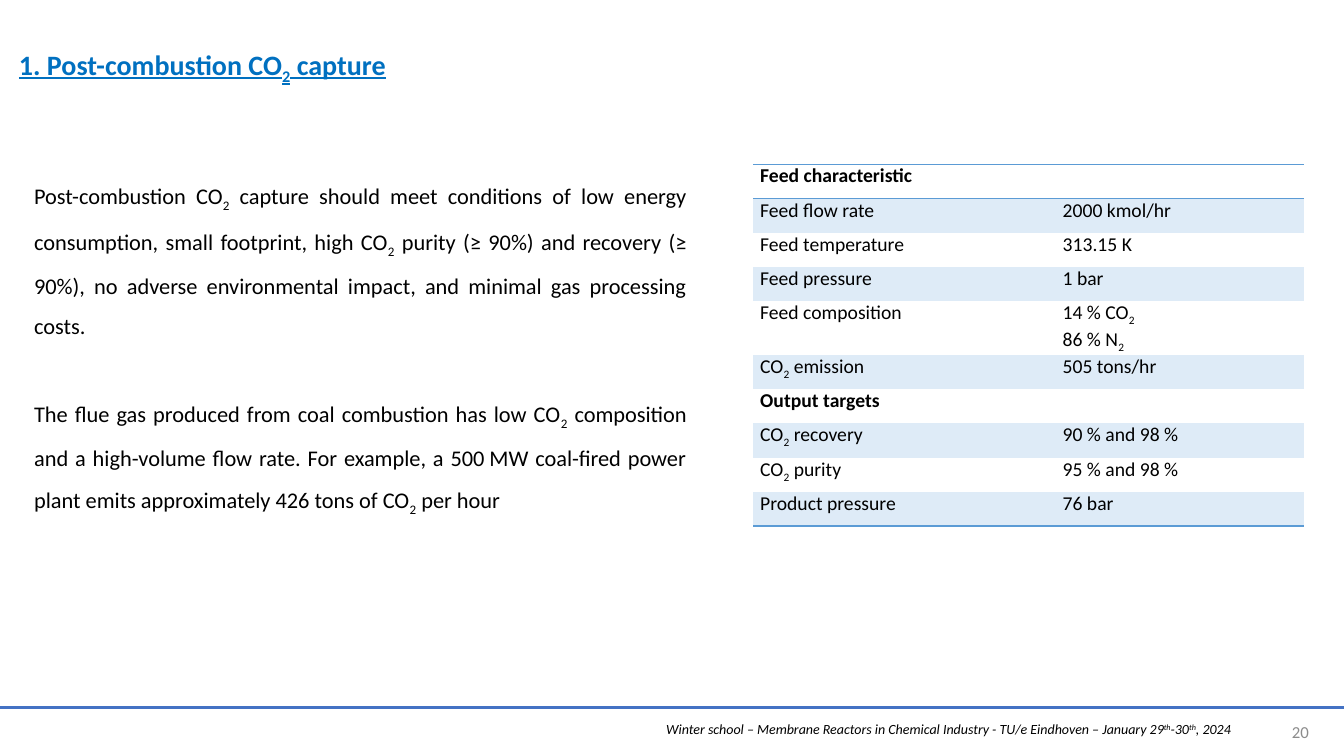
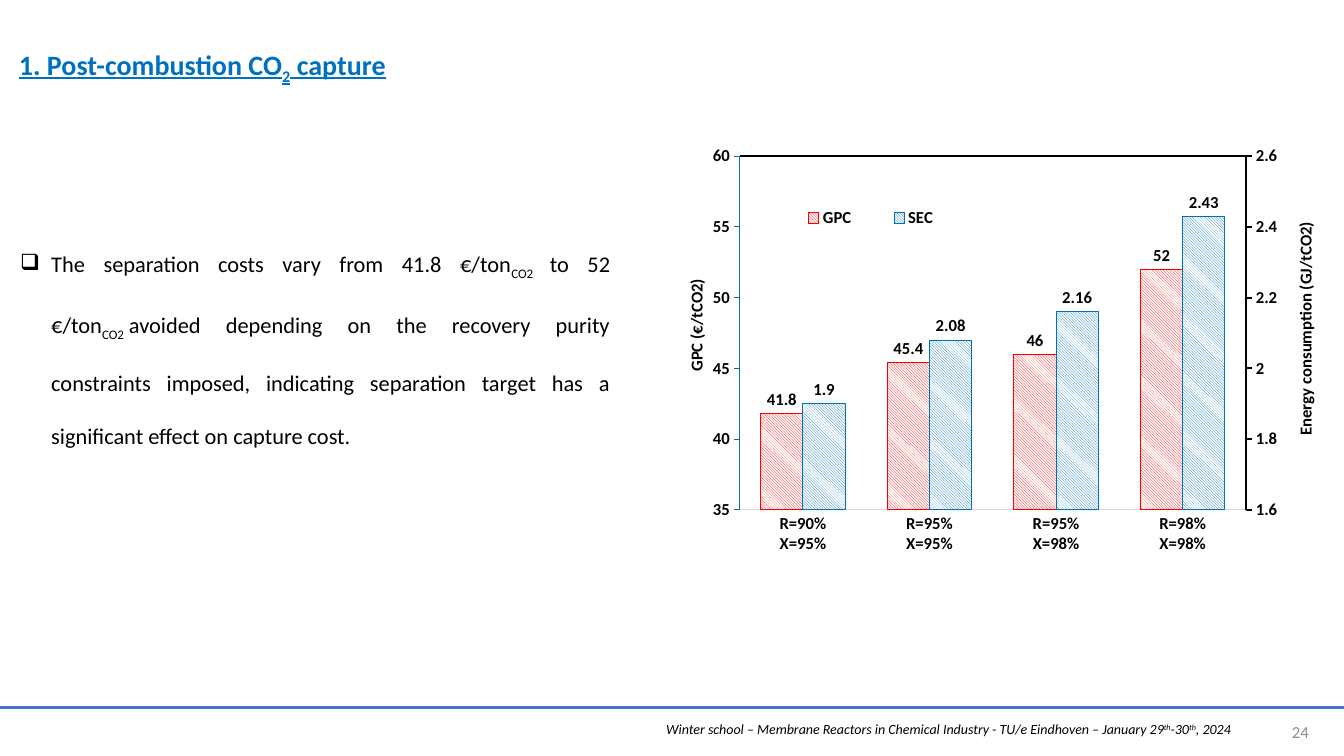
import copy

import lxml.etree
import pptx
import pptx.chart.axis
import pptx.chart.data
import pptx.dml.color
import pptx.enum.chart
import pptx.enum.dml
import pptx.enum.shapes
import pptx.enum.text
import pptx.oxml
import pptx.oxml.ns
import pptx.util

Inches = pptx.util.Inches
Pt = pptx.util.Pt
qn = pptx.oxml.ns.qn
Align = pptx.enum.text.PP_ALIGN

FONT = "Calibri"
BLACK, WHITE, GREY = "000000", "FFFFFF", "8C8C8C"
TITLE_BLUE, RULE_BLUE = "0070C0", "4472C4"
TABLE_BLUE, BAND_BLUE = "5B9BD5", "DEEBF7"
GPC_RED, AXIS_GREY = "FF0000", "D9D9D9"
SUB, SUPER = -25, 30
SLIDE_WIDTH, SLIDE_HEIGHT = 13.33, 7.5
CHART_NS = 'xmlns:c="http://schemas.openxmlformats.org/drawingml/2006/chart"'
HARD_SPACE = chr(160)

TITLE = "1. Post-combustion CO|2| capture"
FOOTER = ("Winter school – Membrane Reactors in Chemical Industry - TU/e Eindhoven"
          " – January 29|th|-30|th|, 2024")

CAPTURE_CONDITIONS = (
    "Post-combustion CO|2| capture should meet conditions of low energy consumption, "
    "small footprint, high CO|2| purity (≥ 90%) and recovery (≥ 90%), no adverse "
    "environmental impact, and minimal gas processing costs.")
FLUE_GAS = (
    "The flue gas produced from coal combustion has low CO|2| composition and a "
    f"high-volume flow rate. For example, a 500{HARD_SPACE}MW coal-fired power plant emits "
    f"approximately 426 tons of CO|2|{HARD_SPACE}per hour")
SEPARATION_COSTS = (
    f"The separation costs vary from 41.8 €/ton|CO2 |to 52 €/ton|CO2|{HARD_SPACE}avoided "
    "depending on the recovery purity constraints imposed, indicating separation target "
    "has a significant effect on capture cost.")

FEED_ROWS = [
    ("Feed characteristic", None),
    ("Feed flow rate", "2000 kmol/hr"),
    ("Feed temperature", "313.15 K"),
    ("Feed pressure", "1 bar"),
    ("Feed composition", "14 % CO|2|\n86 % N|2|"),
    ("CO|2| emission", "505 tons/hr"),
    ("Output targets", None),
    ("CO|2| recovery", "90 % and 98 %"),
    ("CO|2| purity", "95 % and 98 %"),
    ("Product pressure", "76 bar"),
]

TARGETS = ["R=90%\nX=95%", "R=95%\nX=95%", "R=95%\nX=98%", "R=98%\nX=98%"]
EMPTY = [None] * len(TARGETS)
COST_SERIES = [
    ("GPC", [41.8, 45.4, 46, 52]),
    ("Series 2", EMPTY),
    ("Series 3", EMPTY),
    ("SEC", [1.9, 2.08, 2.16, 2.43]),
]


def rgb(value):
    return pptx.dml.color.RGBColor.from_string(value)


def style_font(font, size, color=BLACK, bold=False, italic=False, underline=False):
    font.name = FONT
    font.size = Pt(size)
    font.bold = bold
    font.italic = italic
    font.underline = underline
    font.color.rgb = rgb(color)


def write(frame, text, size=16, align=Align.LEFT, spacing=1.0, shift=SUB,
          bullet=None, hang=0, **font_format):
    frame.word_wrap = True
    for index, line in enumerate(text.split("\n")):
        paragraph = frame.add_paragraph() if index else frame.paragraphs[0]
        paragraph.alignment = align
        paragraph.line_spacing = spacing
        if bullet:
            properties = paragraph._p.get_or_add_pPr()
            properties.set("marL", str(Inches(hang)))
            properties.set("indent", str(-Inches(hang)))
            lxml.etree.SubElement(properties, qn("a:buChar")).set("char", bullet)
        for position, piece in enumerate(line.split("|")):
            if not piece:
                continue
            run = paragraph.add_run()
            run.text = piece
            style_font(run.font, size, **font_format)
            if position % 2:
                run._r.get_or_add_rPr().set("baseline", str(shift * 1000))


def add_text(slide, box, text, anchor=pptx.enum.text.MSO_ANCHOR.TOP, fill=None,
             **text_format):
    holder = slide.shapes.add_textbox(*map(Inches, box))
    if fill:
        holder.fill.solid()
        holder.fill.fore_color.rgb = rgb(fill)
    holder.text_frame.vertical_anchor = anchor
    write(holder.text_frame, text, **text_format)


def add_footer(slide, top, number):
    rule = slide.shapes.add_connector(
        pptx.enum.shapes.MSO_CONNECTOR.STRAIGHT,
        0, Inches(top), Inches(SLIDE_WIDTH), Inches(top))
    rule.line.color.rgb = rgb(RULE_BLUE)
    rule.line.width = Pt(2)
    lxml.etree.SubElement(rule._element.spPr, qn("a:effectLst"))
    add_text(slide, (6.51, top + 0.08, 6.46, 0.28), FOOTER, size=10, italic=True,
             shift=SUPER, fill=WHITE)
    add_text(slide, (11.73, top + 0.01, 1.35, 0.45), str(number), size=12, color=GREY,
             align=Align.RIGHT, anchor=pptx.enum.text.MSO_ANCHOR.MIDDLE)


def add_base_slide(deck, number):
    slide = deck.slides.add_slide(deck.slide_layouts[6])
    add_footer(slide, 7.02, number)
    add_text(slide, (0.09, 0.42, 4.04, 0.44), TITLE, size=20, color=TITLE_BLUE,
             bold=True, underline=True)
    return slide


def add_borders(cell, *sides):
    properties = cell._tc.get_or_add_tcPr()
    for index, side in enumerate(sides):
        border = pptx.oxml.parse_xml(
            f'<a:{side} xmlns:a="http://schemas.openxmlformats.org/drawingml/2006/main"'
            f' w="{Pt(1)}"><a:solidFill><a:srgbClr val="{TABLE_BLUE}"/></a:solidFill>'
            f'</a:{side}>')
        properties.insert(index, border)


def add_feed_table(slide, box):
    table = slide.shapes.add_table(len(FEED_ROWS), 2, *map(Inches, box)).table
    table.first_row = table.horz_banding = False
    table._tbl.tblPr.find(qn("a:tableStyleId")).text = "{2D5ABB26-0587-4C30-8999-92F81FD0307C}"
    table.columns[0].width = Inches(3)
    table.columns[1].width = Inches(box[2] - 3)
    borders = {0: ("lnT", "lnB"), len(FEED_ROWS) - 1: ("lnB",)}
    for index, entries in enumerate(FEED_ROWS):
        is_heading = entries[1] is None
        table.rows[index].height = Inches(0.51 if "\n" in (entries[1] or "") else 0.34)
        if is_heading:
            table.cell(index, 0).merge(table.cell(index, 1))
        for column, entry in enumerate(entries):
            cell = table.cell(index, column)
            cell.margin_left = cell.margin_right = Inches(0.07)
            cell.margin_top = cell.margin_bottom = 0
            if index % 2:
                cell.fill.solid()
                cell.fill.fore_color.rgb = rgb(BAND_BLUE)
            else:
                cell.fill.background()
            add_borders(cell, *borders.get(index, ()))
            if entry:
                write(cell.text_frame, entry, size=14, bold=is_heading)


def set_layout(parent, index, left, top, width=None, height=None, inner=False):
    target = '<c:layoutTarget val="inner"/>' if inner else ""
    size = f'<c:w val="{width}"/><c:h val="{height}"/>' if width else ""
    layout = pptx.oxml.parse_xml(
        f'<c:layout {CHART_NS}><c:manualLayout>{target}<c:xMode val="edge"/>'
        f'<c:yMode val="edge"/><c:x val="{left}"/><c:y val="{top}"/>{size}'
        '</c:manualLayout></c:layout>')
    for old in parent.findall(qn("c:layout")):
        parent.remove(old)
    parent.insert(index, layout)


def style_axis(axis, color, width=0.75):
    axis.has_major_gridlines = False
    axis.major_tick_mark = axis.minor_tick_mark = pptx.enum.chart.XL_TICK_MARK.NONE
    axis.format.line.color.rgb = rgb(color)
    axis.format.line.width = Pt(width)
    style_font(axis.tick_labels.font, 12, bold=True)


def style_value_axis(axis, title, corner, low, high, step, color, width=0.75):
    style_axis(axis, color, width)
    axis.major_tick_mark = pptx.enum.chart.XL_TICK_MARK.OUTSIDE
    axis.minimum_scale, axis.maximum_scale, axis.major_unit = low, high, step
    frame = axis.axis_title.text_frame
    write(frame, title, size=12, bold=True, align=Align.CENTER)
    frame._txBody.bodyPr.set("rot", "-5400000")
    frame._txBody.bodyPr.set("vert", "horz")
    set_layout(axis.axis_title._element, 1, *corner)


def split_to_second_axes(chart):
    area = chart._chartSpace.chart.plotArea
    left_bars = area.find(qn("c:barChart"))
    right_bars = copy.deepcopy(left_bars)
    left_bars.addnext(right_bars)
    for bars, dropped in ((left_bars, slice(2, 4)), (right_bars, slice(0, 2))):
        for series in bars.findall(qn("c:ser"))[dropped]:
            bars.remove(series)
    category, value = area.find(qn("c:catAx")), area.find(qn("c:valAx"))
    top, right = copy.deepcopy(category), copy.deepcopy(value)
    value.addnext(right)
    right.addnext(top)
    new_ids = {category.find(qn("c:axId")).get("val"): "50010",
               value.find(qn("c:axId")).get("val"): "50020"}
    for part in (right_bars, top, right):
        for tag in ("c:axId", "c:crossAx"):
            for reference in part.findall(qn(tag)):
                reference.set("val", new_ids[reference.get("val")])
    for axis, side in ((top, "t"), (right, "r")):
        axis.find(qn("c:axPos")).set("val", side)
        axis.find(qn("c:crosses")).set("val", "max")
    return pptx.chart.axis.CategoryAxis(top), pptx.chart.axis.ValueAxis(right)


def add_legend(chart):
    chart.has_legend = True
    legend = chart.legend
    legend.position = pptx.enum.chart.XL_LEGEND_POSITION.BOTTOM
    legend.include_in_layout = False
    style_font(legend.font, 12, bold=True)
    for hidden in (1, 2):
        entry = pptx.oxml.parse_xml(
            f'<c:legendEntry {CHART_NS}><c:idx val="{hidden}"/><c:delete val="1"/>'
            '</c:legendEntry>')
        legend._element.insert(hidden, entry)
    set_layout(legend._element, 3, 0.15, 0.13, 0.31, 0.06)


def add_cost_chart(slide, box):
    data = pptx.chart.data.CategoryChartData()
    data.categories = TARGETS
    for name, values in COST_SERIES:
        data.add_series(name, values)
    chart = slide.shapes.add_chart(
        pptx.enum.chart.XL_CHART_TYPE.COLUMN_CLUSTERED, *map(Inches, box), data).chart
    chart.has_title = False
    style_font(chart.font, 12, bold=True)
    left_axis = chart.value_axis
    top_axis, right_axis = split_to_second_axes(chart)

    style_axis(chart.category_axis, AXIS_GREY)
    style_axis(top_axis, BLACK, 1.5)
    top_axis.tick_label_position = pptx.enum.chart.XL_TICK_LABEL_POSITION.NONE
    style_value_axis(left_axis, "GPC (€/tCO2)", (0.01, 0.29), 35, 60, 5, TITLE_BLUE)
    style_value_axis(right_axis, "Energy consumption (GJ/tCO2)", (0.96, 0.16),
                     1.6, 2.6, 0.2, BLACK, 1.5)

    for plot in chart.plots:
        plot.gap_width = 100
        plot.overlap = 0
        plot.vary_by_categories = False
        plot.has_data_labels = True
        plot.data_labels.show_value = True
        plot.data_labels.position = pptx.enum.chart.XL_LABEL_POSITION.OUTSIDE_END
        style_font(plot.data_labels.font, 12, bold=True)
        for series in plot.series:
            color = {"GPC": GPC_RED, "SEC": TITLE_BLUE}.get(series.name)
            if color:
                fill = series.format.fill
                fill.patterned()
                fill.pattern = pptx.enum.dml.MSO_PATTERN.LIGHT_DOWNWARD_DIAGONAL
                fill.fore_color.rgb = rgb(color)
                fill.back_color.rgb = rgb(WHITE)
                series.format.line.color.rgb = rgb(color)
                series.format.line.width = Pt(0.75)
    add_legend(chart)
    set_layout(chart._chartSpace.chart.plotArea, 0, 0.1, 0.02, 0.79, 0.8, inner=True)


def build_feed_slide(deck):
    slide = add_base_slide(deck, 20)
    for top, height, text in ((1.61, 1.67, CAPTURE_CONDITIONS), (3.77, 1.27, FLUE_GAS)):
        add_text(slide, (0.24, top, 6.67, height), text, align=Align.JUSTIFY, spacing=1.5)
    add_feed_table(slide, (7.47, 1.63, 5.46, 3.58))


def build_cost_slide(deck):
    slide = add_base_slide(deck, 24)
    add_cost_chart(slide, (6.7, 1.45, 6.4, 4.4))
    add_text(slide, (0.1, 2.13, 6.05, 2.18), SEPARATION_COSTS, align=Align.JUSTIFY,
             spacing=2.0, bullet="❑", hang=0.31)


def main():
    deck = pptx.Presentation()
    deck.slide_width = Inches(SLIDE_WIDTH)
    deck.slide_height = Inches(SLIDE_HEIGHT)
    build_feed_slide(deck)
    build_cost_slide(deck)
    deck.save("out.pptx")


if __name__ == "__main__":
    main()
